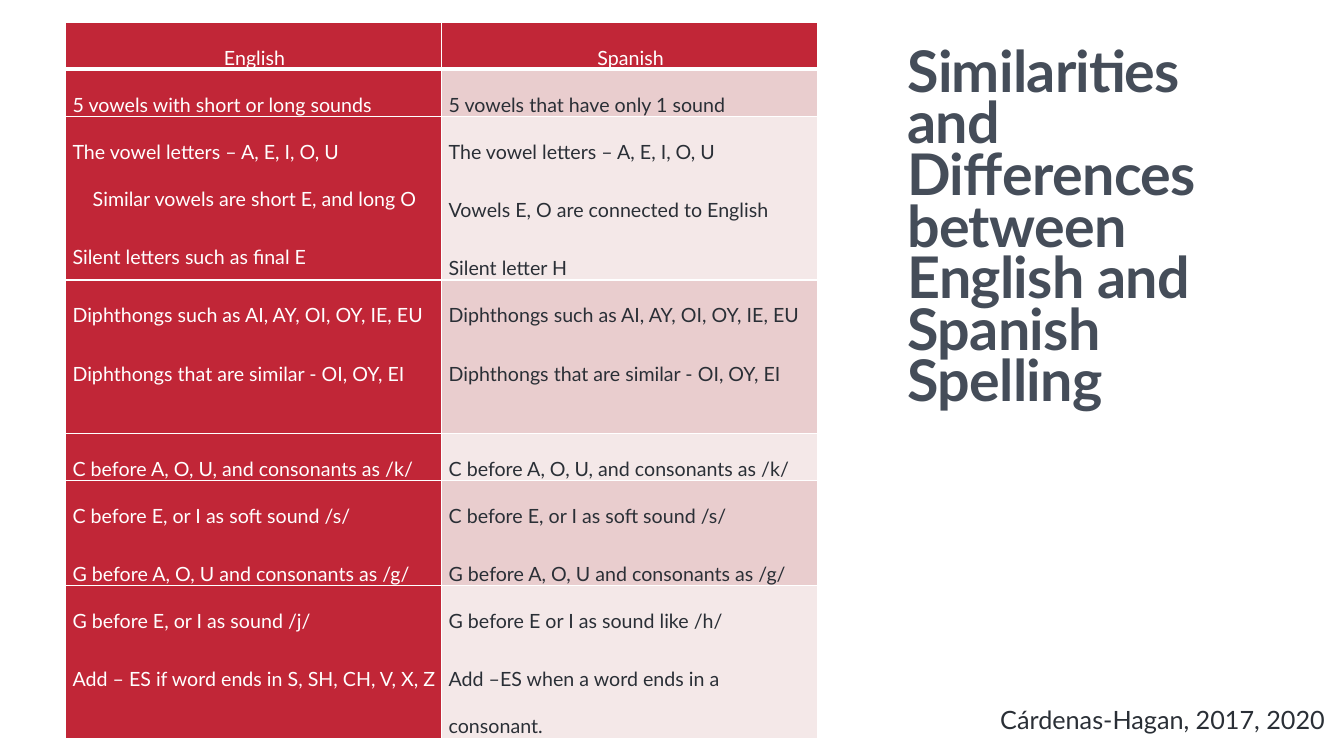
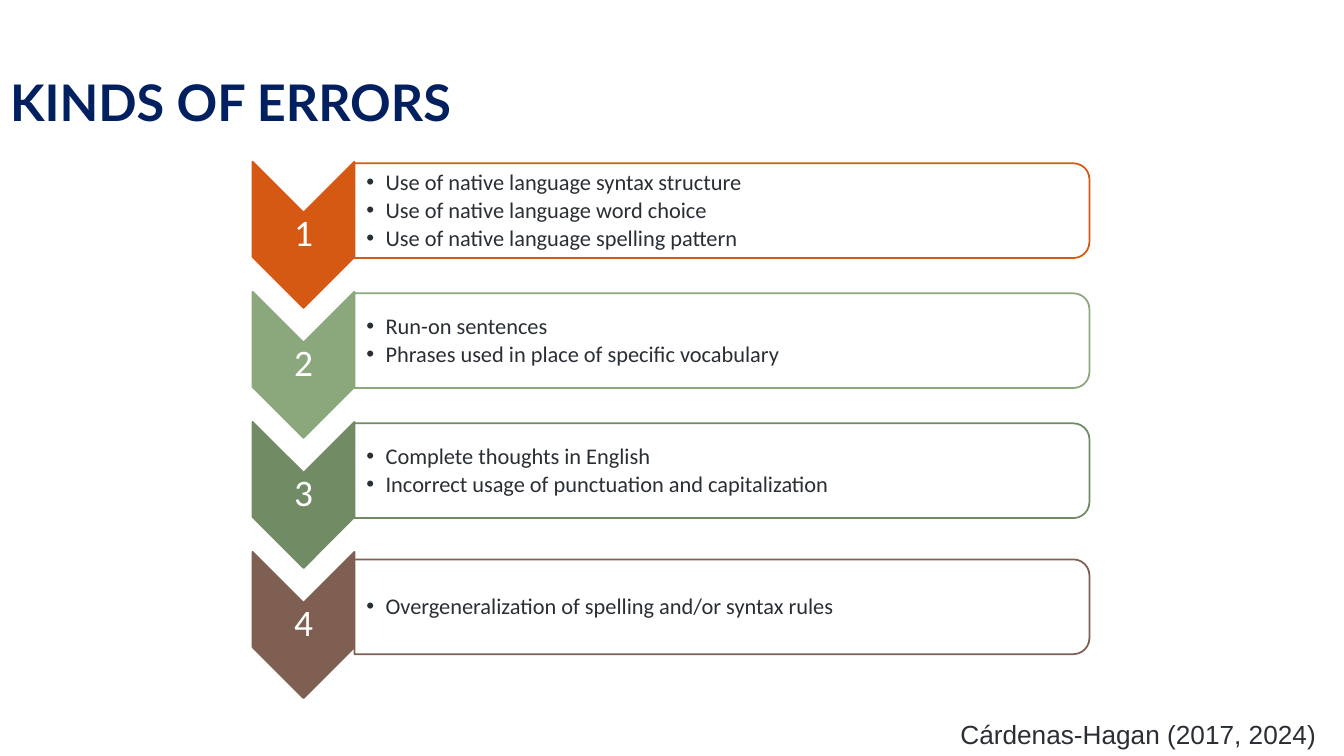
from lxml import etree
from pptx import Presentation
from pptx import util as u
from pptx.dml.color import RGBColor
from pptx.enum import shapes, text
from pptx.oxml.ns import qn

# Shared style
COLORS = {"ink": "2A2F36", "white": "FFFFFF", "red": "C12637", "rose": "E9CDCE",
          "blush": "F4E8E8", "slate": "454D59", "navy": "002060", "orange": "D55813",
          "sage": "8AA87C", "moss": "718B64", "brown": "7F5F51"}
WIDTH, HEIGHT = 13.33, 7.5
LEFT, CENTER, RIGHT = text.PP_ALIGN.LEFT, text.PP_ALIGN.CENTER, text.PP_ALIGN.RIGHT
TOP, MIDDLE, BOTTOM = text.MSO_ANCHOR.TOP, text.MSO_ANCHOR.MIDDLE, text.MSO_ANCHOR.BOTTOM

# Slide 1 content: row height, English paragraphs, Spanish paragraphs
SPELLING_TITLE = "Similarities and Differences between English and Spanish Spelling"
SPELLING_SOURCE = "Cárdenas-Hagan, 2017, 2020"
SHORT_E = "Similar vowels are short E, and long O"
VOWELS = "The vowel letters – A, E, I, O, U"
DIPHTHONGS = ["Diphthongs such as AI, AY, OI, OY, IE, EU",
              "Diphthongs that are similar - OI, OY, EI"]
HARD_C = ["C before A, O, U, and consonants as /k/"]
SOFT_C = ["C before E, or I as soft sound /s/", "G before A, O, U and consonants as /g/"]
SPELLING_ROWS = [
    (0.46, ["English"], ["Spanish"]),
    (0.46, ["5 vowels with short or long sounds"], ["5 vowels that have only 1 sound"]),
    (1.62, [VOWELS, SHORT_E, "Silent letters such as final E"],
     [VOWELS, "Vowels E, O are connected to English", "Silent letter H"]),
    (1.52, DIPHTHONGS, DIPHTHONGS),
    (0.46, HARD_C, HARD_C),
    (1.04, SOFT_C, SOFT_C),
    (1.52, ["G before E, or I as sound /j/", "Add – ES if word ends in S, SH, CH, V, X, Z"],
     ["G before E or I as sound like /h/", "Add –ES when a word ends in a consonant."]),
]

# Slide 2 content: colour, rise of the panel above the chevron's centre, errors
ERRORS_TITLE = "KINDS OF ERRORS"
ERRORS_SOURCE = "Cárdenas-Hagan (2017, 2024)"
ERRORS = [
    ("orange", 0.24, ["Use of native language syntax structure",
                      "Use of native language word choice",
                      "Use of native language spelling pattern"]),
    ("sage", 0.24, ["Run-on sentences", "Phrases used in place of specific vocabulary"]),
    ("moss", 0.24, ["Complete thoughts in English",
                    "Incorrect usage of punctuation and capitalization"]),
    ("brown", 0.18, ["Overgeneralization of spelling and/or syntax rules"]),
]


def rgb(color):
    return RGBColor.from_string(COLORS[color])


def write(frame, lines, size, font, color, align=LEFT, spacing=1.0, bold=False):
    frame.text = "\n".join(lines)
    for para in frame.paragraphs:
        para.alignment, para.line_spacing = align, spacing
        for span in para.runs:
            span.font.size, span.font.name = u.Pt(size), font
            span.font.bold, span.font.color.rgb = bold, rgb(color)


def set_frame(frame, anchor, insets=(0.1, 0.05, 0.1, 0.05)):
    frame.word_wrap, frame.auto_size = True, text.MSO_AUTO_SIZE.NONE
    frame.vertical_anchor = anchor
    (frame.margin_left, frame.margin_top,
     frame.margin_right, frame.margin_bottom) = map(u.Inches, insets)


def add_text(page, place, lines, size, font, color, anchor=TOP,
             insets=(0.1, 0.05, 0.1, 0.05), **style):
    frame = page.shapes.add_textbox(*map(u.Inches, place)).text_frame
    set_frame(frame, anchor, insets)
    write(frame, lines, size, font, color, **style)
    return frame


def add_page(deck, title, place, size, color, spacing):
    page = deck.slides.add_slide(deck.slide_layouts[5])
    box = page.shapes.title
    box.left, box.top, box.width, box.height = map(u.Inches, place)
    set_frame(box.text_frame, BOTTOM)
    write(box.text_frame, [title], size, "Lato", color, spacing=spacing, bold=True)
    return page


def set_borders(cell, bottom):
    props = cell._tc.get_or_add_tcPr()
    for index, (side, points) in enumerate((("L", 1), ("R", 1), ("T", 1), ("B", bottom))):
        line = etree.Element(qn("a:ln" + side), w=str(u.Pt(points)))
        fill = etree.SubElement(line, qn("a:solidFill"))
        etree.SubElement(fill, qn("a:srgbClr"), val=COLORS["white"])
        props.insert(index, line)


def add_spelling_table(page):
    column = 3.73
    heights = [row[0] for row in SPELLING_ROWS]
    place = (0.65, 0.22, 2 * column, sum(heights))
    table = page.shapes.add_table(len(heights), 2, *map(u.Inches, place)).table
    table.first_row = table.horz_banding = False
    for col in table.columns:
        col.width = u.Inches(column)
    for r, (height, *cells) in enumerate(SPELLING_ROWS):
        table.rows[r].height = u.Inches(height)
        for c, lines in enumerate(cells):
            cell = table.cell(r, c)
            dark = r == 0 or c == 0
            cell.fill.solid()
            cell.fill.fore_color.rgb = rgb("red" if dark else "rose" if r % 2 else "blush")
            cell.margin_left, cell.margin_right = u.Inches(0.07), u.Inches(0.05)
            cell.margin_top = cell.margin_bottom = 0
            write(cell.text_frame, lines, 14, "Lato", "white" if dark else "ink",
                  align=LEFT if r else CENTER, spacing=2.0)
            for para in cell.text_frame.paragraphs:
                para.space_after = u.Pt(8)
            if SHORT_E in lines:
                vowels, similar = cell.text_frame.paragraphs[:2]
                vowels.space_after = 0
                similar._p.get_or_add_pPr().set("marL", str(u.Inches(0.2)))
            set_borders(cell, 1 if r else 3)


def add_turned(page, kind, center, size, fill, line):
    """Add a preset shape turned a quarter clockwise about its centre."""
    (x, y), (w, h) = center, size
    shape = page.shapes.add_shape(kind, *map(u.Inches, (x - w / 2, y - h / 2, w, h)))
    shape.rotation, shape.shadow.inherit = 90, False
    shape.fill.solid()
    shape.fill.fore_color.rgb = rgb(fill)
    shape.line.color.rgb, shape.line.width = rgb(line), u.Pt(1.25)
    return shape


def add_errors(page):
    first, pitch = 2.33, 1.29
    chevron_x, chevron_w, panel_x, panel_w = 3.01, 1.01, 7.16, 7.29
    for i, (color, rise, errors) in enumerate(ERRORS):
        y = first + i * pitch
        # Numbered chevron
        add_turned(page, shapes.MSO_SHAPE.CHEVRON, (chevron_x, y), (1.45, chevron_w),
                   color, color)
        add_text(page, (chevron_x - chevron_w / 2, y - 0.22, chevron_w, 0.43), [str(i + 1)],
                 26.7, "Calibri", "white", MIDDLE, (0.02,) * 4, align=CENTER, spacing=0.9)
        # Panel with its bullets
        panel = add_turned(page, shapes.MSO_SHAPE.ROUND_2_SAME_RECTANGLE,
                           (panel_x, y - rise), (0.94, panel_w), "white", color)
        panel.adjustments[0], panel.adjustments[1] = 0.17, 0
        frame = add_text(page, (panel_x - panel_w / 2, y - rise - 0.42, panel_w - 0.05, 0.85),
                         errors, 16, "Calibri", "ink", MIDDLE, (0.12, 0.01, 0.01, 0.01),
                         spacing=0.9)
        for n, para in enumerate(frame.paragraphs):
            if n:
                para.space_before = u.Pt(2.7)
            props = para._p.get_or_add_pPr()
            props.set("marL", str(u.Inches(0.19)))
            props.set("indent", str(-u.Inches(0.19)))
            etree.SubElement(props, qn("a:buFont"), typeface="Arial")
            etree.SubElement(props, qn("a:buChar"), char="•")


def main():
    deck = Presentation()
    deck.slide_width, deck.slide_height = u.Inches(WIDTH), u.Inches(HEIGHT)

    # Spelling comparison
    page = add_page(deck, SPELLING_TITLE, (8.9, 0.5, 3.72, 3.64), 41, "slate", 0.75)
    for span in page.shapes.title.text_frame.paragraphs[0].runs:
        span.font._element.set("spc", "-50")
    add_spelling_table(page)
    add_text(page, (5.56, 6.94, 7.68, 0.4), [SPELLING_SOURCE], 18, "Lato", "ink", align=RIGHT)

    # Kinds of errors
    page = add_page(deck, ERRORS_TITLE, (0, 0, 12.5, 1.36), 36, "navy", 0.9)
    add_errors(page)
    add_text(page, (8.16, 7.08, 4.99, 0.42), [ERRORS_SOURCE], 18.7, "Arial", "ink", align=RIGHT)

    deck.save("out.pptx")


if __name__ == "__main__":
    main()
